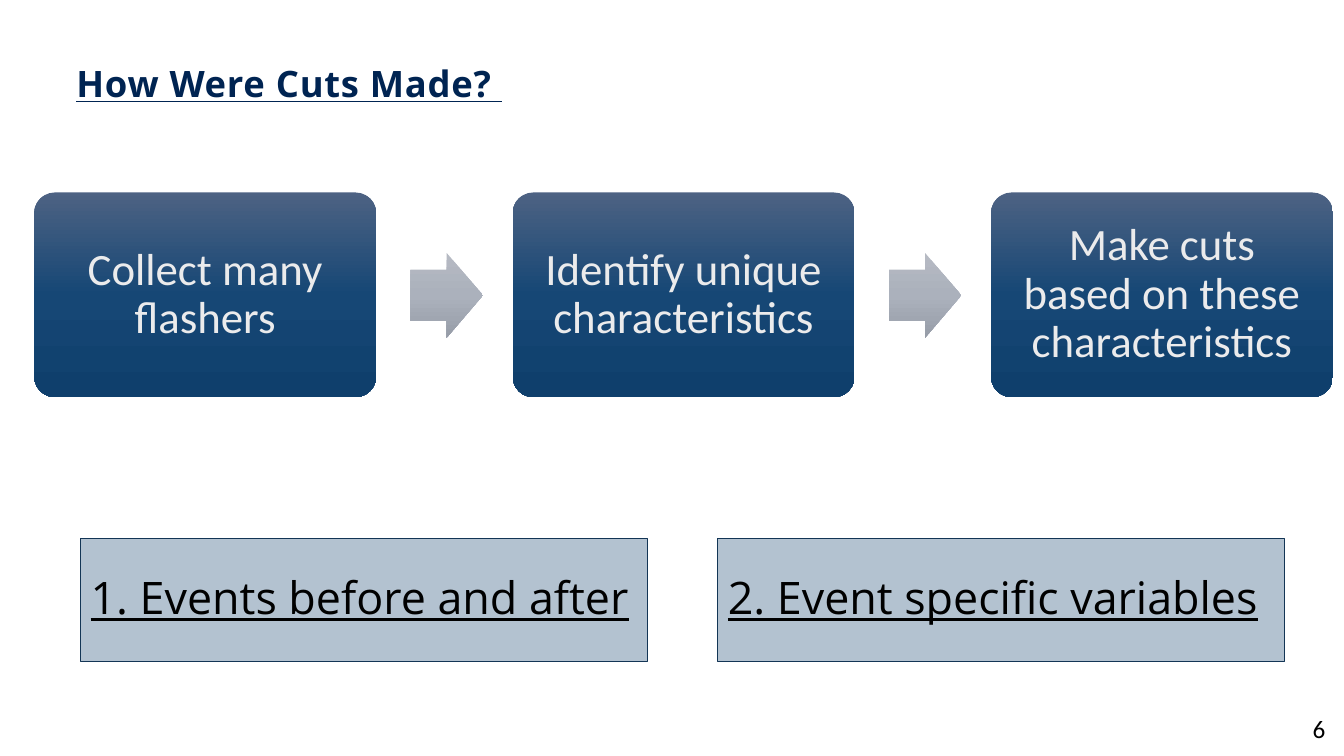
from copy import deepcopy

from pptx import Presentation
from pptx.dml.color import RGBColor
from pptx.enum.shapes import MSO_SHAPE
from pptx.enum.text import MSO_ANCHOR, PP_ALIGN
from pptx.oxml.ns import qn
from pptx.util import Inches, Pt

NAVY = RGBColor(0x00, 0x24, 0x52)
BLACK = RGBColor(0x00, 0x00, 0x00)
PALE_BLUE = RGBColor(0xB3, 0xC2, 0xD0)
OUTLINE = RGBColor(0x13, 0x35, 0x55)
STEP_TEXT = RGBColor(0xEB, 0xEB, 0xEC)
STEP_SHADES = [RGBColor(0x4D, 0x62, 0x83), RGBColor(0x16, 0x47, 0x75), RGBColor(0x0F, 0x3F, 0x6C)]
ARROW_SHADES = [RGBColor(0xB6, 0xBA, 0xC3), RGBColor(0xAB, 0xB1, 0xBC), RGBColor(0x97, 0x9D, 0xA8)]


def write(box, text, font_name, size, color, spacing=1.0, align=PP_ALIGN.LEFT):
    box.text_frame.word_wrap = True
    paragraph = box.text_frame.paragraphs[0]
    paragraph.text = text
    paragraph.alignment = align
    paragraph.line_spacing = spacing
    paragraph.font.name = font_name
    paragraph.font.size = Pt(size)
    paragraph.font.color.rgb = color
    return paragraph


def shade_downward(shape, shades):
    shape.shadow.inherit = False
    shape.line.fill.background()
    shape.fill.gradient()
    shape.fill.gradient_angle = 270
    # The default gradient has two stops; add one for the middle
    stop_list = shape._element.spPr.find(qn("a:gradFill")).find(qn("a:gsLst"))
    stop_list.insert(1, deepcopy(stop_list[0]))
    for stop, position, shade in zip(shape.fill.gradient_stops, (0, 0.5, 1), shades):
        stop.position = position
        stop.color.rgb = shade


prs = Presentation()
prs.slide_width = Inches(13.33)
prs.slide_height = Inches(7.5)
slide = prs.slides.add_slide(prs.slide_layouts[6])

# Title
title = slide.shapes.add_textbox(Inches(0.66), Inches(0.61), Inches(10.89), Inches(0.69))
heading = write(title, "How Were Cuts Made? ", "Open Sans", 26, NAVY, 0.9)
heading.font.bold = True
heading.font.underline = True
heading.runs[0]._r.get_or_add_rPr().set("spc", "50")

# Process steps, with an arrow between neighbours
steps = [
    "Collect many flashers",
    "Identify unique characteristics",
    "Make cuts based on these characteristics",
]
STEP_PITCH = 4.745
for index, text in enumerate(steps):
    left = 0.34 + index * STEP_PITCH
    step = slide.shapes.add_shape(
        MSO_SHAPE.ROUNDED_RECTANGLE, Inches(left), Inches(1.91), Inches(3.39), Inches(2.03))
    step.adjustments[0] = 0.1
    shade_downward(step, STEP_SHADES)
    frame = step.text_frame
    frame.vertical_anchor = MSO_ANCHOR.MIDDLE
    frame.margin_left = frame.margin_right = Inches(0.13)
    frame.margin_top = frame.margin_bottom = Inches(0.13)
    write(step, text, "Calibri", 32, STEP_TEXT, 0.9, PP_ALIGN.CENTER)

    if index < len(steps) - 1:
        arrow = slide.shapes.add_shape(
            MSO_SHAPE.RIGHT_ARROW, Inches(left + 3.73), Inches(2.51), Inches(0.72), Inches(0.84))
        arrow.adjustments[0] = 0.6
        arrow.adjustments[1] = 0.5
        shade_downward(arrow, ARROW_SHADES)

# Kinds of cut
for left, text in [(0.8, "1. Events before and after"), (7.12, "2. Event specific variables")]:
    cut = slide.shapes.add_shape(
        MSO_SHAPE.RECTANGLE, Inches(left), Inches(5.34), Inches(5.62), Inches(1.22))
    cut.shadow.inherit = False
    cut.fill.solid()
    cut.fill.fore_color.rgb = PALE_BLUE
    cut.line.color.rgb = OUTLINE
    cut.line.width = Pt(0.75)
    cut.text_frame.vertical_anchor = MSO_ANCHOR.TOP
    label = write(cut, text, "Open Sans", 32, BLACK, 1.5)
    label.space_after = Pt(12)
    label.font.underline = True

# Page number
page_number = slide.shapes.add_textbox(Inches(12.92), Inches(7.03), Inches(0.54), Inches(0.4))
write(page_number, "6", "Calibri", 18, BLACK)

prs.save("out.pptx")
